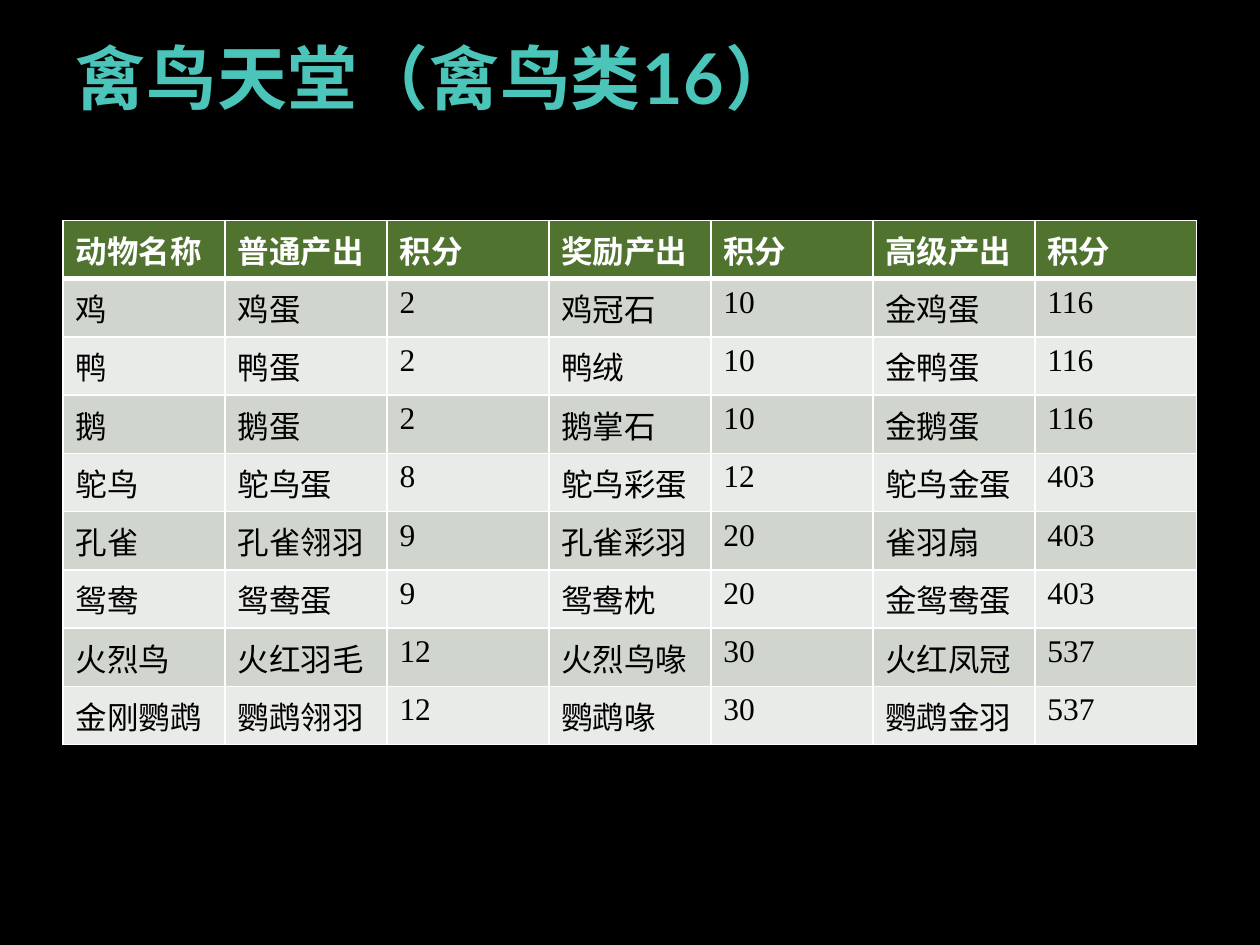
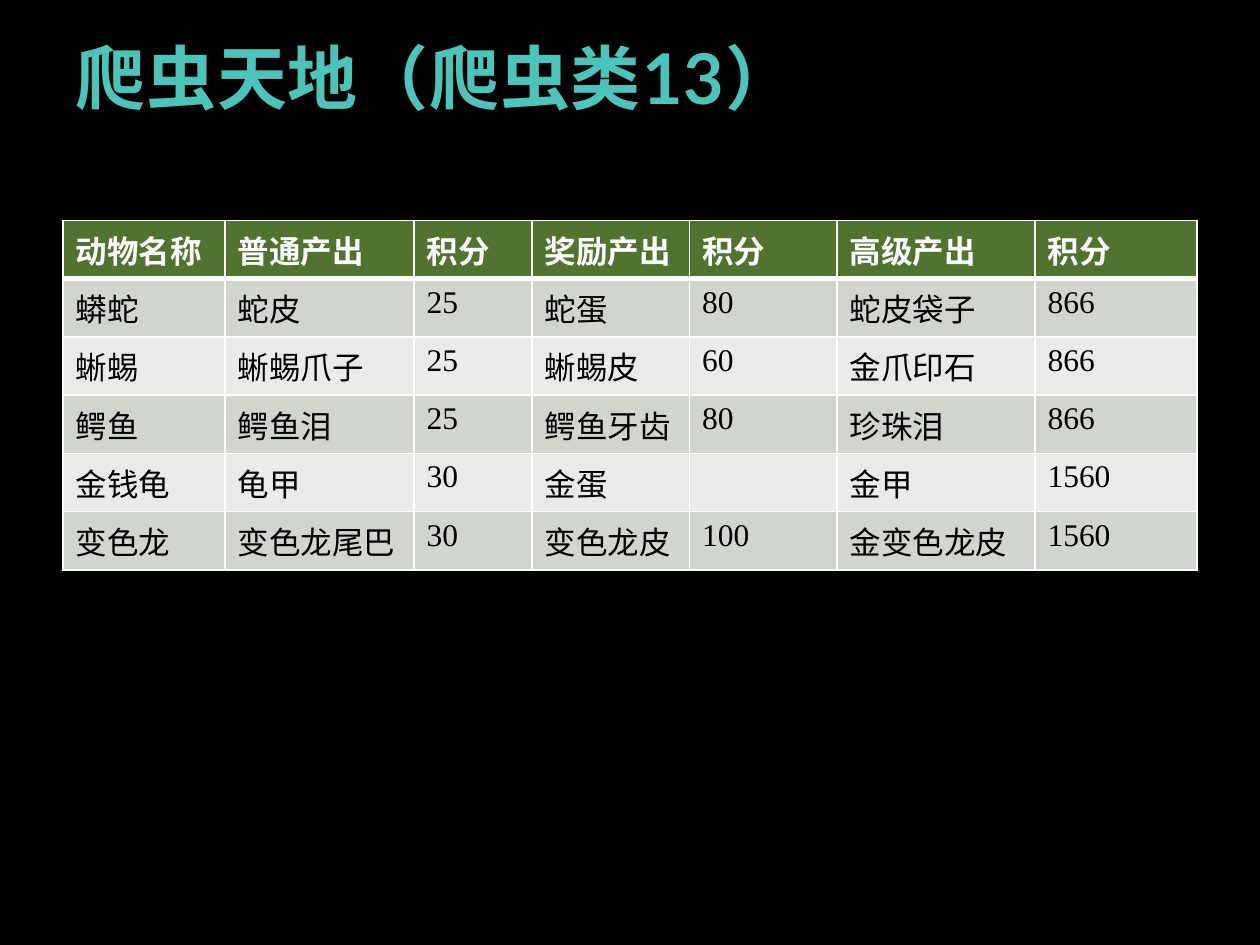
from lxml import etree
from pptx import Presentation
from pptx import util as u
from pptx.dml import color
from pptx.enum import text
from pptx.oxml import ns

COLOURS = {
    "background": "000000",
    "title": "4BC5B9",
    "header": "50742F",
    "header_text": "FFFFFF",
    "body_text": "000000",
    "odd_row": "D0D6CD",
    "even_row": "E9EBE8",
    "border": "FFFFFF",
}
TITLE_FONT, TABLE_FONT = "Lato", "Times New Roman"
TABLE_LEFT, TABLE_TOP, TABLE_WIDTH, ROW_HEIGHT = 36, 126, 648, 29.2
THIN, THICK = 1, 3

HEADINGS = ("动物名称", "普通产出", "积分", "奖励产出", "积分", "高级产出", "积分")
SLIDES = [
    {
        "title": "禽鸟天堂（禽鸟类16）",
        "widths": [TABLE_WIDTH / len(HEADINGS)] * len(HEADINGS),
        "animals": [
            ("鸡", "鸡蛋", "2", "鸡冠石", "10", "金鸡蛋", "116"),
            ("鸭", "鸭蛋", "2", "鸭绒", "10", "金鸭蛋", "116"),
            ("鹅", "鹅蛋", "2", "鹅掌石", "10", "金鹅蛋", "116"),
            ("鸵鸟", "鸵鸟蛋", "8", "鸵鸟彩蛋", "12", "鸵鸟金蛋", "403"),
            ("孔雀", "孔雀翎羽", "9", "孔雀彩羽", "20", "雀羽扇", "403"),
            ("鸳鸯", "鸳鸯蛋", "9", "鸳鸯枕", "20", "金鸳鸯蛋", "403"),
            ("火烈鸟", "火红羽毛", "12", "火烈鸟喙", "30", "火红凤冠", "537"),
            ("金刚鹦鹉", "鹦鹉翎羽", "12", "鹦鹉喙", "30", "鹦鹉金羽", "537"),
        ],
    },
    {
        "title": "爬虫天地（爬虫类13）",
        "widths": [92.57, 108, 67.5, 90, 84.36, 113, 92.57],
        "animals": [
            ("蟒蛇", "蛇皮", "25", "蛇蛋", "80", "蛇皮袋子", "866"),
            ("蜥蜴", "蜥蜴爪子", "25", "蜥蜴皮", "60", "金爪印石", "866"),
            ("鳄鱼", "鳄鱼泪", "25", "鳄鱼牙齿", "80", "珍珠泪", "866"),
            ("金钱龟", "龟甲", "30", "金蛋", "", "金甲", "1560"),
            ("变色龙", "变色龙尾巴", "30", "变色龙皮", "100", "金变色龙皮", "1560"),
        ],
    },
]


def rgb(name):
    return color.RGBColor.from_string(COLOURS[name])


def format_font(font, name, size, colour, bold):
    font.name, font.size, font.bold = name, u.Pt(size), bold
    font.color.rgb = rgb(colour)


def add_title(slide, wording):
    title = slide.shapes.title
    title.left, title.top, title.width, title.height = map(u.Pt, (36, 21.6, 612, 90))
    frame = title.text_frame
    frame.text = wording
    frame.auto_size = text.MSO_AUTO_SIZE.NONE
    frame.vertical_anchor = text.MSO_ANCHOR.TOP
    paragraph = frame.paragraphs[0]
    paragraph.alignment = text.PP_ALIGN.LEFT
    paragraph.line_spacing = 0.9
    run = paragraph.runs[0]
    format_font(run.font, TITLE_FONT, 40, "title", True)
    run.font._element.set("spc", "50")


def add_borders(cell, top, bottom):
    """Draw all four cell edges; must precede the cell's fill in the XML."""
    properties = cell._tc.get_or_add_tcPr()
    for side, width in (("L", THIN), ("R", THIN), ("T", top), ("B", bottom)):
        line = etree.SubElement(properties, ns.qn(f"a:ln{side}"), w=str(u.Pt(width)))
        fill = etree.SubElement(line, ns.qn("a:solidFill"))
        etree.SubElement(fill, ns.qn("a:srgbClr"), val=COLOURS["border"])


def format_cell(cell, wording, row_number):
    is_header = row_number == 0
    add_borders(cell, THICK if row_number == 1 else THIN, THICK if is_header else THIN)
    cell.fill.solid()
    row_fill = "header" if is_header else ("even_row", "odd_row")[row_number % 2]
    cell.fill.fore_color.rgb = rgb(row_fill)
    paragraph = cell.text_frame.paragraphs[0]
    paragraph.text = wording
    text_colour = "header_text" if is_header else "body_text"
    for run in paragraph.runs:
        format_font(run.font, TABLE_FONT, 18, text_colour, is_header)


def add_animal_table(slide, widths, animals):
    rows = [HEADINGS, *animals]
    frame = slide.shapes.add_table(
        len(rows), len(HEADINGS), u.Pt(TABLE_LEFT), u.Pt(TABLE_TOP),
        u.Pt(TABLE_WIDTH), u.Pt(ROW_HEIGHT * len(rows)))
    table = frame.table
    table.horz_banding = False
    for column, width in zip(table.columns, widths):
        column.width = u.Pt(width)
    for row_number, row in enumerate(rows):
        table.rows[row_number].height = u.Pt(ROW_HEIGHT)
        for column_number, wording in enumerate(row):
            format_cell(table.cell(row_number, column_number), wording, row_number)


def main():
    presentation = Presentation()
    presentation.slide_width, presentation.slide_height = u.Pt(720), u.Pt(540)
    background = presentation.slide_master.background.fill
    background.solid()
    background.fore_color.rgb = rgb("background")
    title_only = presentation.slide_layouts.get_by_name("Title Only")
    for content in SLIDES:
        slide = presentation.slides.add_slide(title_only)
        add_title(slide, content["title"])
        add_animal_table(slide, content["widths"], content["animals"])
    presentation.save("out.pptx")


if __name__ == "__main__":
    main()
